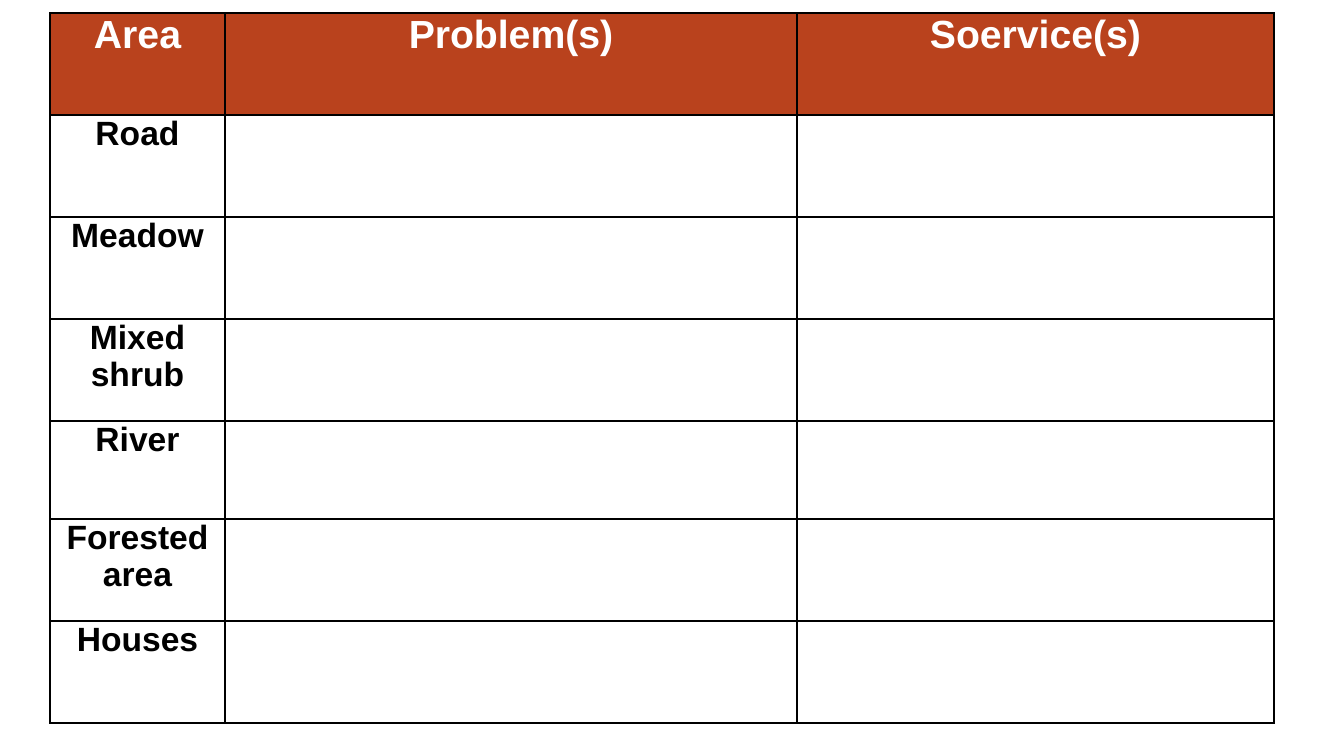
from lxml.etree import SubElement
from pptx import Presentation
from pptx.dml.color import RGBColor
from pptx.enum.text import MSO_ANCHOR, PP_ALIGN
from pptx.oxml.ns import qn
from pptx.util import Pt

PX = 914400 / 100.8
RUST = RGBColor(0xB9, 0x42, 0x1D)
WHITE = RGBColor(0xFF, 0xFF, 0xFF)
BLACK = RGBColor(0x00, 0x00, 0x00)
HEADINGS = ["Area", "Problem(s)", "Soervice(s)"]
AREAS = ["Road", "Meadow", "Mixed shrub", "River", "Forested area", "Houses"]
COLUMN_WIDTHS = [175, 572, 477]
ROW_HEIGHTS = [102, 102, 102, 102, 98, 102, 102]


def px(length):
    """Turn pixels into EMU."""
    return round(length * PX)


def write(cell, text, size=24, color=BLACK, bold=True, font="Arial"):
    """Put centred, formatted text in a cell."""
    paragraph = cell.text_frame.paragraphs[0]
    paragraph.alignment = PP_ALIGN.CENTER
    run = paragraph.add_run()
    run.text = text
    run.font.name = font
    run.font.size = Pt(size)
    run.font.bold = bold
    run.font.color.rgb = color


def frame_cell(cell, fill=None):
    """Give a cell its margins, thin black borders and fill."""
    cell.margin_left = cell.margin_right = px(7)
    cell.margin_top = cell.margin_bottom = 0
    cell.vertical_anchor = MSO_ANCHOR.TOP
    properties = cell._tc.get_or_add_tcPr()
    for side in ("lnL", "lnR", "lnT", "lnB"):
        border = SubElement(properties, qn(f"a:{side}"), w=str(Pt(1)))
        solid = SubElement(border, qn("a:solidFill"))
        SubElement(solid, qn("a:srgbClr"), val=str(BLACK))
    if fill is None:
        cell.fill.background()
    else:
        cell.fill.solid()
        cell.fill.fore_color.rgb = fill


def add_area_table(slide, left, top):
    """Place the worksheet of areas, problems and services."""
    table = slide.shapes.add_table(
        len(ROW_HEIGHTS), len(COLUMN_WIDTHS), px(left), px(top),
        px(sum(COLUMN_WIDTHS)), px(sum(ROW_HEIGHTS))).table
    table.first_row = table.horz_banding = False
    for column, width in zip(table.columns, COLUMN_WIDTHS):
        column.width = px(width)
    for index, (row, height) in enumerate(zip(table.rows, ROW_HEIGHTS)):
        row.height = px(height)
        for cell in row.cells:
            frame_cell(cell, fill=RUST if index == 0 else None)
    for column, heading in enumerate(HEADINGS):
        write(table.cell(0, column), heading, size=28, color=WHITE)
    for row, area in enumerate(AREAS, start=1):
        write(table.cell(row, 0), area)


def main():
    """Build and save the slide."""
    deck = Presentation()
    deck.slide_width, deck.slide_height = px(1344), px(756)
    slide = deck.slides.add_slide(deck.slide_layouts[6])
    add_area_table(slide, left=50, top=13)
    deck.save("out.pptx")


if __name__ == "__main__":
    main()
